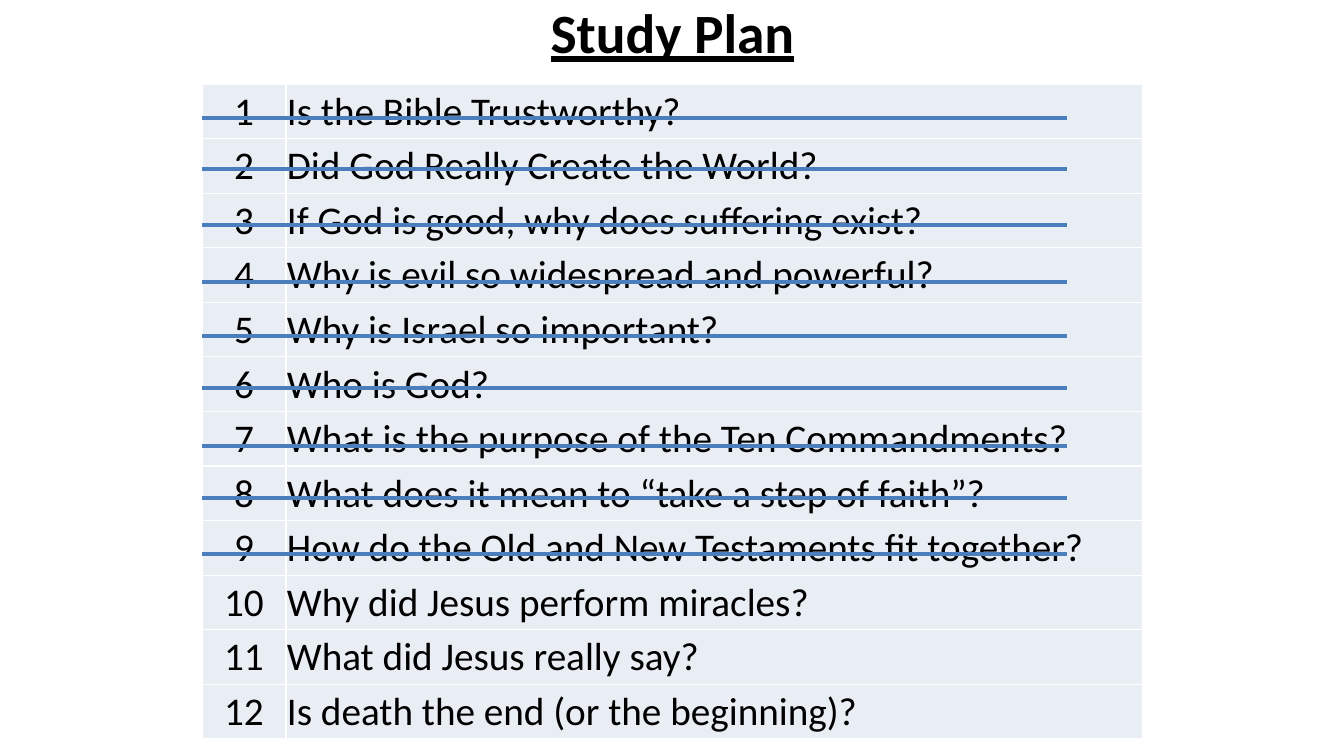
import pptx
import pptx.util
import pptx.dml.color
import pptx.enum.shapes
import pptx.enum.text
import pptx.oxml
import pptx.oxml.ns
from dataclasses import dataclass

TITLE = "Study Plan"
TOPICS = [
    "Is the Bible Trustworthy?",
    "Did God Really Create the World?",
    "If God is good, why does suffering exist?",
    "Why is evil so widespread and powerful?",
    "Why is Israel so important?",
    "Who is God?",
    "What is the purpose of the Ten Commandments?",
    "What does it mean to “take a step of faith”?",
    "How do the Old and New Testaments fit together?",
    "Why did Jesus perform miracles?",
    "What did Jesus really say?",
    "Is death the end (or the beginning)?",
]
STRIKE_YS = [118, 169, 225, 282, 336, 388, 446, 498, 554]
STRIKE_LEFT, STRIKE_RIGHT = 202, 1067
SLIDE_SIZE = (1344, 756)
TITLE_BOX = (219, -8, 907, 79)
TABLE_BOX = (202, 84, 941, 655)
COLUMN_WIDTHS = (84, 857)


@dataclass(frozen=True)
class Theme:
    font: str = "Calibri"
    text: str = "000000"
    cell: str = "E9EDF4"
    border: str = "FFFFFF"
    strike: str = "4B7EBC"
    title_size: float = 39.6
    body_size: float = 28
    border_width: float = 1
    strike_width: float = 2.25


THEME = Theme()
ALIGN = pptx.enum.text.PP_ALIGN
MIDDLE = pptx.enum.text.MSO_ANCHOR.MIDDLE


def px(n):
    return pptx.util.Emu(round(n * 914400 / 100.8))


def rgb(value):
    return pptx.dml.color.RGBColor.from_string(value)


def format_paragraph(p, size, align):
    p.alignment = align
    p.font.name = THEME.font
    p.font.size = pptx.util.Pt(size)
    p.font.color.rgb = rgb(THEME.text)


def add_title(slide):
    sp = slide.shapes.title
    sp.left, sp.top, sp.width, sp.height = map(px, TITLE_BOX)
    tf = sp.text_frame
    tf.text = TITLE
    tf.vertical_anchor = MIDDLE
    tf.auto_size = pptx.enum.text.MSO_AUTO_SIZE.NONE
    p = tf.paragraphs[0]
    format_paragraph(p, THEME.title_size, ALIGN.CENTER)
    p.font.bold = True
    p.font.underline = True


def set_borders(cell):
    tc_pr = cell._tc.get_or_add_tcPr()
    width = pptx.util.Pt(THEME.border_width)
    for side in ("lnL", "lnR", "lnT", "lnB"):
        tc_pr.append(pptx.oxml.parse_xml(
            f'<a:{side} {pptx.oxml.ns.nsdecls("a")} w="{width}"><a:solidFill>'
            f'<a:srgbClr val="{THEME.border}"/></a:solidFill></a:{side}>'))


def fill_cell(cell, text, align):
    cell.text = text
    cell.vertical_anchor = MIDDLE
    cell.margin_left = cell.margin_right = cell.margin_top = px(1)
    cell.margin_bottom = 0
    format_paragraph(cell.text_frame.paragraphs[0], THEME.body_size, align)
    set_borders(cell)
    cell.fill.solid()
    cell.fill.fore_color.rgb = rgb(THEME.cell)


def add_topics(slide):
    table = slide.shapes.add_table(len(TOPICS), 2, *map(px, TABLE_BOX)).table
    table.first_row = False
    table.horz_banding = False
    for column, width in zip(table.columns, COLUMN_WIDTHS):
        column.width = px(width)
    for i, topic in enumerate(TOPICS):
        table.rows[i].height = px(TABLE_BOX[3] / len(TOPICS))
        fill_cell(table.cell(i, 0), str(i + 1), ALIGN.CENTER)
        fill_cell(table.cell(i, 1), topic, ALIGN.LEFT)


def add_strike(slide, y):
    line = slide.shapes.add_connector(
        pptx.enum.shapes.MSO_CONNECTOR.STRAIGHT,
        px(STRIKE_LEFT), px(y), px(STRIKE_RIGHT), px(y))
    line.line.color.rgb = rgb(THEME.strike)
    line.line.width = pptx.util.Pt(THEME.strike_width)
    line._element.spPr.append(pptx.oxml.parse_xml(
        f'<a:effectLst {pptx.oxml.ns.nsdecls("a")}/>'))


def main():
    prs = pptx.Presentation()
    prs.slide_width, prs.slide_height = map(px, SLIDE_SIZE)
    slide = prs.slides.add_slide(prs.slide_layouts[5])
    add_title(slide)
    add_topics(slide)
    for y in STRIKE_YS:
        add_strike(slide, y)
    prs.save("out.pptx")


if __name__ == "__main__":
    main()
